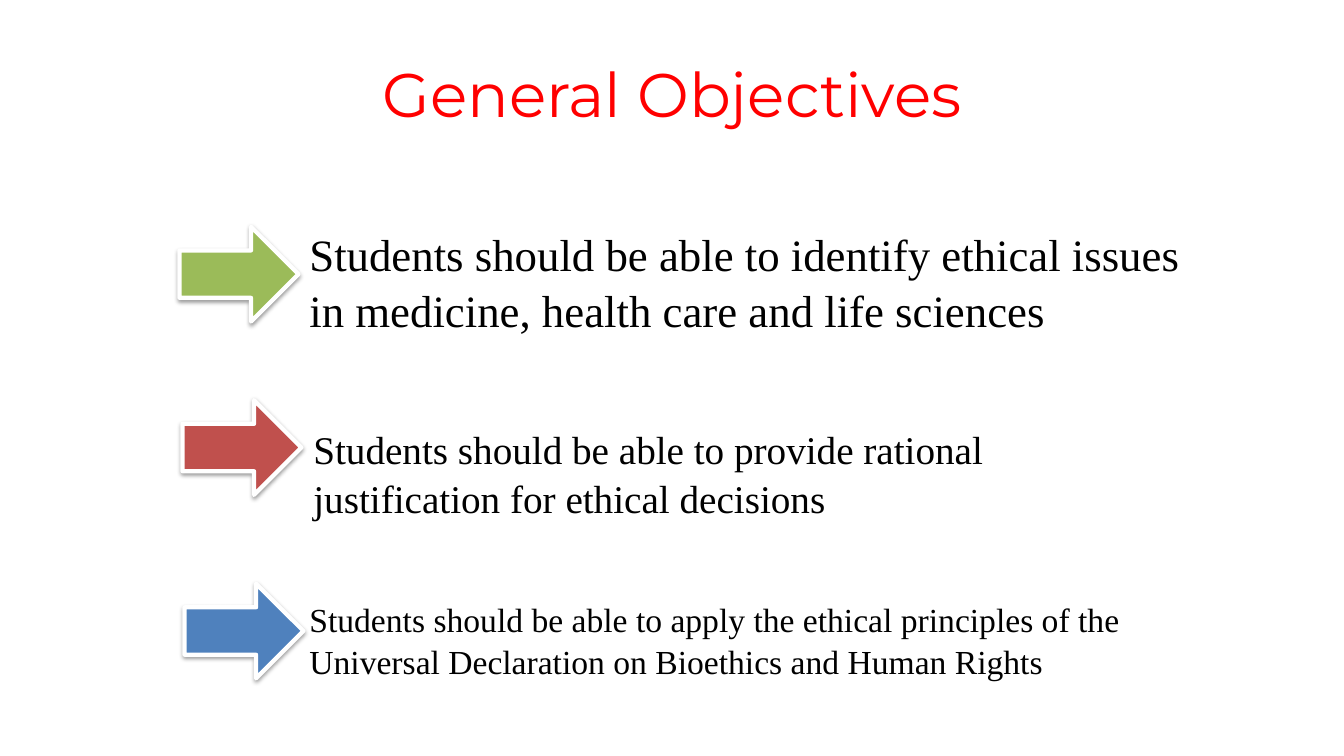
"""Build the General Objectives slide."""
from typing import NamedTuple

from lxml.etree import SubElement
from pptx import Presentation
from pptx.dml.color import RGBColor as RGB
from pptx.enum.shapes import MSO_SHAPE as Shape
from pptx.enum.text import MSO_ANCHOR as Anchor, PP_ALIGN as Align
from pptx.oxml.ns import qn
from pptx.util import Inches, Pt

COLORS = {
    "title": "FF0000", "text": "000000", "outline": "FFFFFF", "shadow": "000000",
    "green": "9BBB59", "red": "C0504D", "blue": "4F81BD",
}
SHADOW = {"blurRad": Pt(3.1), "dist": Pt(1.6), "dir": 90 * 60000, "rotWithShape": 0}
ARROW_SIZE = (1.18, 0.94)


class Objective(NamedTuple):
    """An arrow and the objective it points to, in inches and points."""
    text: str
    size: int
    box: tuple[float, float, float, float]
    arrow: tuple[float, float]
    color: str


OBJECTIVES = [
    Objective("Students should be able to identify ethical issues in medicine, "
              "health care and life sciences",
              32, (2.97, 2.18, 9, 1.37), (1.78, 2.25), "green"),
    Objective("Students should be able to provide rational justification "
              "for ethical decisions",
              28, (3.01, 4.15, 8.16, 1.04), (1.81, 3.97), "red"),
    Objective("Students should be able to apply the ethical principles of the "
              "Universal Declaration on Bioethics and Human Rights",
              24, (2.97, 5.88, 8.54, 0.91), (1.83, 5.79), "blue"),
]


def write(tf, text: str, name: str, size: int, color: str, align: Align) -> None:
    """Put one formatted run into a text frame."""
    tf.word_wrap = True
    p = tf.paragraphs[0]
    p.alignment = align
    r = p.add_run()
    r.text = text
    for key, value in {"name": name, "size": Pt(size)}.items():
        setattr(r.font, key, value)
    r.font.color.rgb = RGB.from_string(COLORS[color])


def add_title(s, text: str) -> None:
    """Place and format the title placeholder."""
    sp = s.shapes.title
    place = {"left": 0.67, "top": 0.3, "width": 12, "height": 1.25}
    for key, value in place.items():
        setattr(sp, key, Inches(value))
    sp.text_frame.vertical_anchor = Anchor.MIDDLE
    write(sp.text_frame, text, "Montserrat", 44, "title", Align.CENTER)


def add_shadow(sp) -> None:
    """Give a shape a soft shadow that falls straight down."""
    sp.shadow.inherit = False
    effects = sp._element.spPr.find(qn("a:effectLst"))
    outer = SubElement(effects, qn("a:outerShdw"),
                       {key: str(int(value)) for key, value in SHADOW.items()})
    color = SubElement(outer, qn("a:srgbClr"), val=COLORS["shadow"])
    SubElement(color, qn("a:alpha"), val="38000")


def add_arrow(s, item: Objective) -> None:
    """Draw the arrow of an objective."""
    place = map(Inches, item.arrow + ARROW_SIZE)
    sp = s.shapes.add_shape(Shape.RIGHT_ARROW, *place)
    sp.fill.solid()
    sp.fill.fore_color.rgb = RGB.from_string(COLORS[item.color])
    sp.line.color.rgb = RGB.from_string(COLORS["outline"])
    sp.line.width = Pt(3)
    add_shadow(sp)


def add_objective(s, item: Objective) -> None:
    """Draw an objective with its arrow."""
    add_arrow(s, item)
    sp = s.shapes.add_textbox(*map(Inches, item.box))
    write(sp.text_frame, item.text, "Times New Roman", item.size, "text", Align.LEFT)
    sp.text_frame.paragraphs[0].line_spacing = 1.04


def main() -> None:
    """Build and save the presentation."""
    prs = Presentation()
    prs.slide_width, prs.slide_height = Inches(13.33), Inches(7.5)
    s = prs.slides.add_slide(prs.slide_layouts[5])
    add_title(s, "General Objectives")
    for item in OBJECTIVES:
        add_objective(s, item)
    prs.save("out.pptx")


if __name__ == "__main__":
    main()
